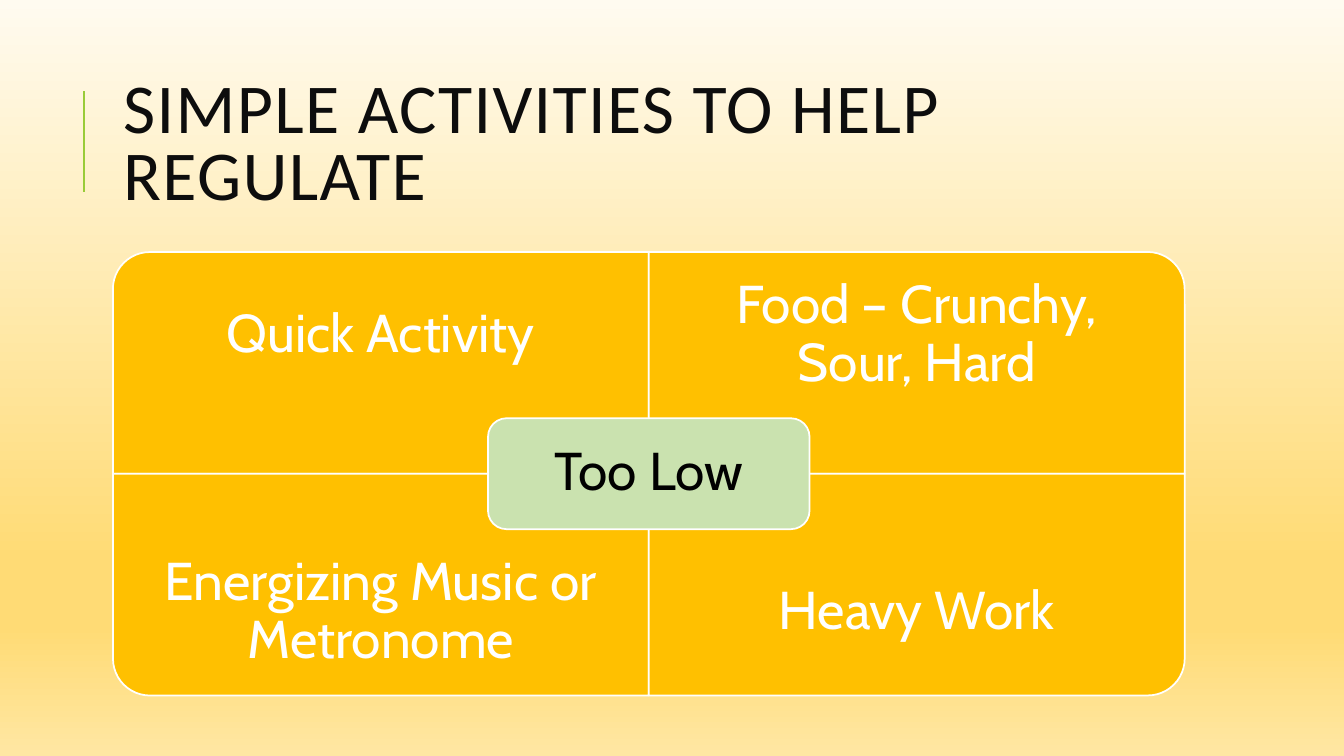
import pptx
import pptx.dml.color
import pptx.enum.shapes
import pptx.enum.text
import pptx.oxml
import pptx.oxml.ns
import pptx.util
from lxml import etree

SHAPE = pptx.enum.shapes.MSO_SHAPE
ALIGN = pptx.enum.text.PP_ALIGN
LEFT, TOP = 1.12, 2.5
COL, ROW = 10.63 / 20, 4.4 / 8


def rgb(value):
    return pptx.dml.color.RGBColor.from_string(value)


class RegulationSlide:
    """Draws styled elements on one slide, placed on a grid of 20 columns and 8 rows."""

    def __init__(self, prs):
        self.s = prs.slides.add_slide(prs.slide_layouts[5])
        self.font, self.size = "Cabin", 38
        self.amber, self.green, self.white, self.black = "FFC000", "CAE2AF", "FFFFFF", "000000"

    def box(self, col, row, cols, rows):
        return [pptx.util.Inches(v) for v in
                (LEFT + col * COL, TOP + row * ROW, cols * COL, rows * ROW)]

    def background(self, stops):
        fill = self.s.background.fill
        fill.gradient()
        grad = self.s.background._cSld.bg.bgPr.find(pptx.oxml.ns.qn("a:gradFill"))
        for child in list(grad):
            grad.remove(child)
        gs_list = etree.SubElement(grad, pptx.oxml.ns.qn("a:gsLst"))
        for percent, color in stops:
            gs = etree.SubElement(gs_list, pptx.oxml.ns.qn("a:gs"), pos=str(percent * 1000))
            etree.SubElement(gs, pptx.oxml.ns.qn("a:srgbClr"), val=color)
        etree.SubElement(grad, pptx.oxml.ns.qn("a:lin"), ang="5400000", scaled="0")

    def set_text(self, shape, text, color, font, size, align, spacing):
        tf = shape.text_frame
        tf.word_wrap = True
        tf.auto_size = pptx.enum.text.MSO_AUTO_SIZE.NONE
        tf.vertical_anchor = pptx.enum.text.MSO_ANCHOR.MIDDLE
        p = tf.paragraphs[0]
        p.text = text
        p.alignment, p.line_spacing = align, spacing
        p.font.name, p.font.size = font, pptx.util.Pt(size)
        p.font.color.rgb = rgb(color)
        return p

    def label(self, shape, text, color, inset):
        tf = shape.text_frame
        tf.margin_left = tf.margin_right = pptx.util.Inches(inset)
        tf.margin_top = tf.margin_bottom = pptx.util.Inches(inset)
        self.set_text(shape, text, color, self.font, self.size, ALIGN.CENTER, 0.9)

    def title(self, text):
        sp = self.s.shapes.title
        sp.left, sp.top, sp.width, sp.height = self.box(0, -1.86 / ROW, 20, 1.64 / ROW)
        p = self.set_text(sp, text, "0D0D0D", "Calibri", 50, ALIGN.LEFT, 0.8)
        p.font._element.set("spc", "100")

    def accent_line(self, x, top, bottom):
        x, top, bottom = [pptx.util.Inches(v) for v in (x, top, bottom)]
        line = self.s.shapes.add_connector(
            pptx.enum.shapes.MSO_CONNECTOR.STRAIGHT, x, bottom, x, top)
        line.line.color.rgb = rgb("99CB38")
        line.line.width = pptx.util.Pt(1.5)
        etree.SubElement(line._element.spPr, pptx.oxml.ns.qn("a:effectLst"))

    def panel(self, kind, bounds, fill):
        sp = self.s.shapes.add_shape(kind, *bounds)
        sp.shadow.inherit = False
        sp.fill.solid()
        sp.fill.fore_color.rgb = rgb(fill)
        sp.line.color.rgb = rgb(self.white)
        sp.line.width = pptx.util.Pt(1.25)
        return sp

    def quadrant(self, text, right, lower, rotation):
        x, y, w, h = self.box(10 * right, 4 * lower, 10, 4)
        if rotation % 180:
            x, y, w, h = x + (w - h) // 2, y + (h - w) // 2, h, w
        self.panel(SHAPE.ROUND_1_RECTANGLE, (x, y, w, h), self.amber).rotation = rotation
        tb = self.s.shapes.add_textbox(*self.box(10 * right, 5 * lower, 10, 3))
        self.label(tb, text, self.white, 0.3)

    def center(self, text):
        sp = self.panel(SHAPE.ROUNDED_RECTANGLE, self.box(7, 3, 6, 2), self.green)
        self.label(sp, text, self.black, 0.2)


def main():
    prs = pptx.Presentation()
    prs.slide_width, prs.slide_height = pptx.util.Inches(13.33), pptx.util.Inches(7.5)
    slide = RegulationSlide(prs)
    slide.background([(0, "FFFBF0"), (74, "FFDB75"), (83, "FFDB75"), (100, "FFE7A3")])
    slide.accent_line(0.83, 0.9, 1.9)
    slide.title("SIMPLE ACTIVITIES TO HELP REGULATE")
    for text, right, lower, rotation in (
        ("Quick Activity", 0, 0, 270),
        ("Food – Crunchy, Sour, Hard", 1, 0, 0),
        ("Energizing Music or Metronome", 0, 1, 180),
        ("Heavy Work", 1, 1, 90),
    ):
        slide.quadrant(text, right, lower, rotation)
    slide.center("Too Low")
    prs.save("out.pptx")


if __name__ == "__main__":
    main()
